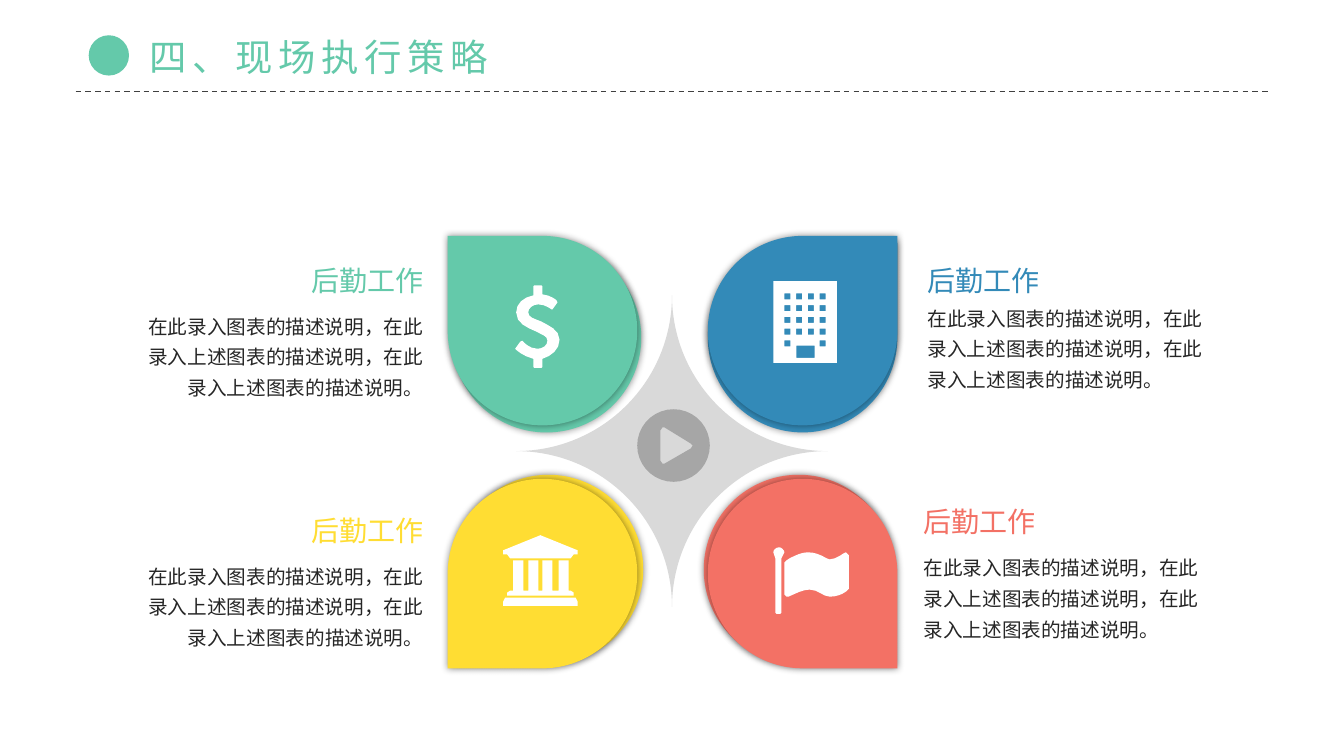
from math import cos, pi, sin

from lxml.etree import SubElement
from pptx import Presentation
from pptx.dml.color import RGBColor
from pptx.enum.dml import MSO_LINE
from pptx.enum.shapes import MSO_CONNECTOR, MSO_SHAPE
from pptx.enum.text import MSO_AUTO_SIZE, PP_ALIGN
from pptx.oxml.ns import qn
from pptx.util import Inches, Pt

COLORS = {"green": "64C9AA", "blue": "338AB8", "yellow": "FFDD33", "red": "F37165",
          "star": "D9D9D9", "play": "A6A6A6", "white": "FFFFFF",
          "body": "262626", "rule": "404040", "shadow": "000000"}
HEADING_FONT, BODY_FONT = "Noto Sans CJK JP", "Noto Sans CJK SC"
CAPTION = "后勤工作"
DESCRIPTION = "在此录入图表的描述说明，在此录入上述图表的描述说明，在此录入上述图表的描述说明。"
PETAL_SIZE = 1.88
CURVE_STEPS = 4


def rgb(name):
    return RGBColor.from_string(COLORS[name])


def paint(shape, color):
    shape.fill.solid()
    shape.fill.fore_color.rgb = rgb(color)
    shape.line.fill.background()
    shape.shadow.inherit = False
    return shape


def add_preset(slide, kind, box, color):
    return paint(slide.shapes.add_shape(kind, *map(Inches, box)), color)


def add_text(slide, box, text, size, color, font=HEADING_FONT, align=PP_ALIGN.LEFT,
             wrap=False, inset=0, line_spacing=None, tracking=None):
    frame = slide.shapes.add_textbox(*map(Inches, box)).text_frame
    frame.word_wrap = wrap
    frame.auto_size = MSO_AUTO_SIZE.SHAPE_TO_FIT_TEXT
    frame.margin_left = frame.margin_right = Inches(inset)
    frame.margin_top = frame.margin_bottom = Inches(inset / 2)
    paragraph = frame.paragraphs[0]
    paragraph.alignment = align
    if line_spacing:
        paragraph.line_spacing = line_spacing
    run = paragraph.add_run()
    run.text = text
    run.font.size = Pt(size)
    run.font.name = font
    run.font.color.rgb = rgb(color)
    properties = run.font._element
    SubElement(properties, qn("a:ea")).set("typeface", font)
    if tracking:
        properties.set("spc", str(tracking * 100))


# Outlines: lists of points in inches, relative to the icon's corner
def trace(*steps):
    """Follow points (x, y) and cubic curves (x1, y1, x2, y2, x, y)."""
    points = []
    for step in steps:
        if len(step) == 2:
            points.append(step)
            continue
        knots = [points[-1], step[:2], step[2:4], step[4:]]
        for t in (i / CURVE_STEPS for i in range(1, CURVE_STEPS + 1)):
            weights = ((1 - t) ** 3, 3 * t * (1 - t) ** 2, 3 * t * t * (1 - t), t ** 3)
            points.append(tuple(sum(w * k[axis] for w, k in zip(weights, knots))
                                for axis in (0, 1)))
    return points


def circle(radius, sides=36):
    return [(radius + radius * cos(2 * pi * i / sides), radius + radius * sin(2 * pi * i / sides))
            for i in range(sides)]


def rectangle(x, y, width, height):
    return [(x, y), (x + width, y), (x + width, y + height), (x, y + height)]


def draw_outlines(slide, left, top, outlines, color):
    placed = [[(Inches(left + x), Inches(top + y)) for x, y in outline]
              for outline in outlines]
    builder = slide.shapes.build_freeform(*placed[0][0], scale=1.0)
    for index, outline in enumerate(placed):
        if index:
            builder.move_to(*outline[0])
        builder.add_line_segments(outline[1:], close=True)
    paint(builder.convert_to_shape(), color)


def play_outlines():
    triangle = [(.53, .34), (.55, .36), (.53, .39), (.27, .54), (.25, .54), (.23, .51),
                (.23, .21), (.25, .18), (.27, .18)]
    return [circle(.36), triangle]


def dollar_outlines():
    return [trace(
        (.27, .73), (.27, .81), (.26, .82), (.19, .82), (.18, .81), (.18, .73),
        (.07, .7, .01, .64, .01, .64), (0, .63), (.05, .56), (.07, .55), (.08, .56),
        (.08, .56, .14, .63, .22, .63), (.27, .63, .32, .6, .32, .55),
        (.32, .5, .26, .49, .21, .46), (.12, .42, .01, .38, .01, .27),
        (.01, .18, .08, .12, .18, .1), (.18, .01), (.19, 0), (.26, 0), (.27, .01),
        (.27, .09), (.36, .1, .41, .15, .41, .15), (.42, .17), (.37, .24), (.36, .24),
        (.36, .24, .3, .19, .23, .19), (.17, .19, .13, .23, .13, .27),
        (.13, .32, .19, .33, .26, .36), (.33, .4, .44, .44, .44, .54),
        (.44, .64, .36, .7, .27, .73))]


def building_outlines():
    windows = [rectangle(.11 + .35 * column / 3, .12 + .35 * row / 3, .06, .06)
               for row in range(5) for column in range(4)
               if row < 4 or column in (0, 3)]
    door = rectangle(.23, .64, .18, .12)
    return [rectangle(0, 0, .63, .81), *windows, door]


def temple_outlines():
    roof = [(0, .15), (.37, 0), (.74, .15), (.74, .19), (.7, .19), (.67, .23),
            (.07, .23), (.04, .19), (0, .19)]
    columns = [point for x in (.1, .25, .39, .55)
               for point in ((x, .55), (x, .25), (x + .1, .25), (x + .1, .55))]
    hall = [(.04, .6), (.04, .57), (.07, .55), *columns, (.67, .55), (.7, .57), (.7, .6)]
    steps = [(0, .7), (0, .66), (.02, .62), (.72, .62), (.74, .66), (.74, .7)]
    return [roof, hall, steps]


def flag_outlines():
    pole = trace((.08, .11), (.08, .65), (.07, .66), (.03, .66), (.02, .65), (.02, .11),
                 (0, .05), (0, .03, .02, 0, .06, 0), (.08, 0, .11, .03, .11, .05))
    cloth = trace((.75, .41), (.72, .44), (.68, .47, .62, .49, .56, .49),
                  (.49, .49, .45, .42, .36, .42), (.29, .42, .22, .46, .15, .49),
                  (.13, .49), (.11, .47), (.11, .15), (.13, .13), (.16, .11),
                  (.22, .08, .28, .05, .34, .05), (.41, .05, .46, .07, .53, .11),
                  (.56, .12), (.63, .12, .7, .05, .72, .05), (.75, .08))
    return [pole, cloth]


def add_header(slide, left, top, width):
    rule_top = Inches(top + .56)
    rule = slide.shapes.add_connector(MSO_CONNECTOR.STRAIGHT, Inches(left), rule_top,
                                      Inches(left + width), rule_top)
    rule.line.color.rgb = rgb("rule")
    rule.line.width = Pt(1)
    rule.line.dash_style = MSO_LINE.DASH
    SubElement(rule._element.spPr, qn("a:effectLst"))
    add_preset(slide, MSO_SHAPE.OVAL, (left + .13, top, .4, .4), "green")
    add_text(slide, (left + .63, top - .06, 3.64, .55), "四、现场执行策略", 26.7, "green",
             inset=.1, tracking=4)


def add_star(slide, left, top, size):
    star = add_preset(slide, MSO_SHAPE.PLAQUE, (left, top, size, size), "star")
    star.adjustments[0] = .5


def add_petal(slide, left, top, color, rotation, back_shift):
    """A teardrop over a slightly shifted twin, each with a soft shadow."""
    for dx, dy in (back_shift, (0, 0)):
        petal = add_preset(slide, MSO_SHAPE.TEAR,
                           (left + dx, top + dy, PETAL_SIZE, PETAL_SIZE), color)
        petal.rotation = rotation
        effects = petal._element.spPr.find(qn("a:effectLst"))
        glow = SubElement(effects, qn("a:outerShdw"), blurRad=str(int(Pt(5))), dist="0",
                          algn="ctr", rotWithShape="0")
        tint = SubElement(glow, qn("a:srgbClr"), val=COLORS["shadow"])
        SubElement(tint, qn("a:alpha"), val="40000")


def add_description(slide, left, top, width, color, align, gap):
    caption_left = left + width - 1.12 if align == PP_ALIGN.RIGHT else left
    add_text(slide, (left, top + gap, width, .92), DESCRIPTION, 14, "body", font=BODY_FONT,
             align=align, wrap=True, line_spacing=1.3)
    add_text(slide, (caption_left, top, 1.12, .34), CAPTION, 20, color, align=align)


def main():
    deck = Presentation()
    deck.slide_width, deck.slide_height = Inches(13.33), Inches(7.5)
    slide = deck.slides.add_slide(deck.slide_layouts[6])
    add_header(slide, .75, .35, 11.83)
    add_star(slide, 5.12, 2.93, 3.09)

    # Color, petal corner, rotation, shift of the back petal
    petals = [("green", 4.44, 2.34, 270, (.04, .07)), ("blue", 7.02, 2.34, 0, (0, .07)),
              ("yellow", 4.44, 4.75, 180, (.06, -.04)), ("red", 7.02, 4.75, 90, (-.04, -.04))]
    for color, left, top, rotation, back_shift in petals:
        add_petal(slide, left, top, color, rotation, back_shift)

    # Color, text corner, width, alignment, distance from caption to description
    descriptions = [("yellow", 1.41, 5.09, 2.79, PP_ALIGN.RIGHT, .44),
                    ("blue", 9.2, 2.61, 2.73, PP_ALIGN.LEFT, .36),
                    ("green", 1.41, 2.61, 2.79, PP_ALIGN.RIGHT, .44),
                    ("red", 9.16, 5.01, 2.77, PP_ALIGN.LEFT, .44)]
    for color, left, top, width, align, gap in descriptions:
        add_description(slide, left, top, width, color, align, gap)

    # Icons
    icons = [(6.32, 4.06, play_outlines(), "play"), (5.11, 2.83, dollar_outlines(), "white"),
             (4.99, 5.31, temple_outlines(), "white"),
             (7.67, 2.79, building_outlines(), "white"), (7.67, 5.43, flag_outlines(), "white")]
    for left, top, outlines, color in icons:
        draw_outlines(slide, left, top, outlines, color)
    deck.save("out.pptx")


if __name__ == "__main__":
    main()
